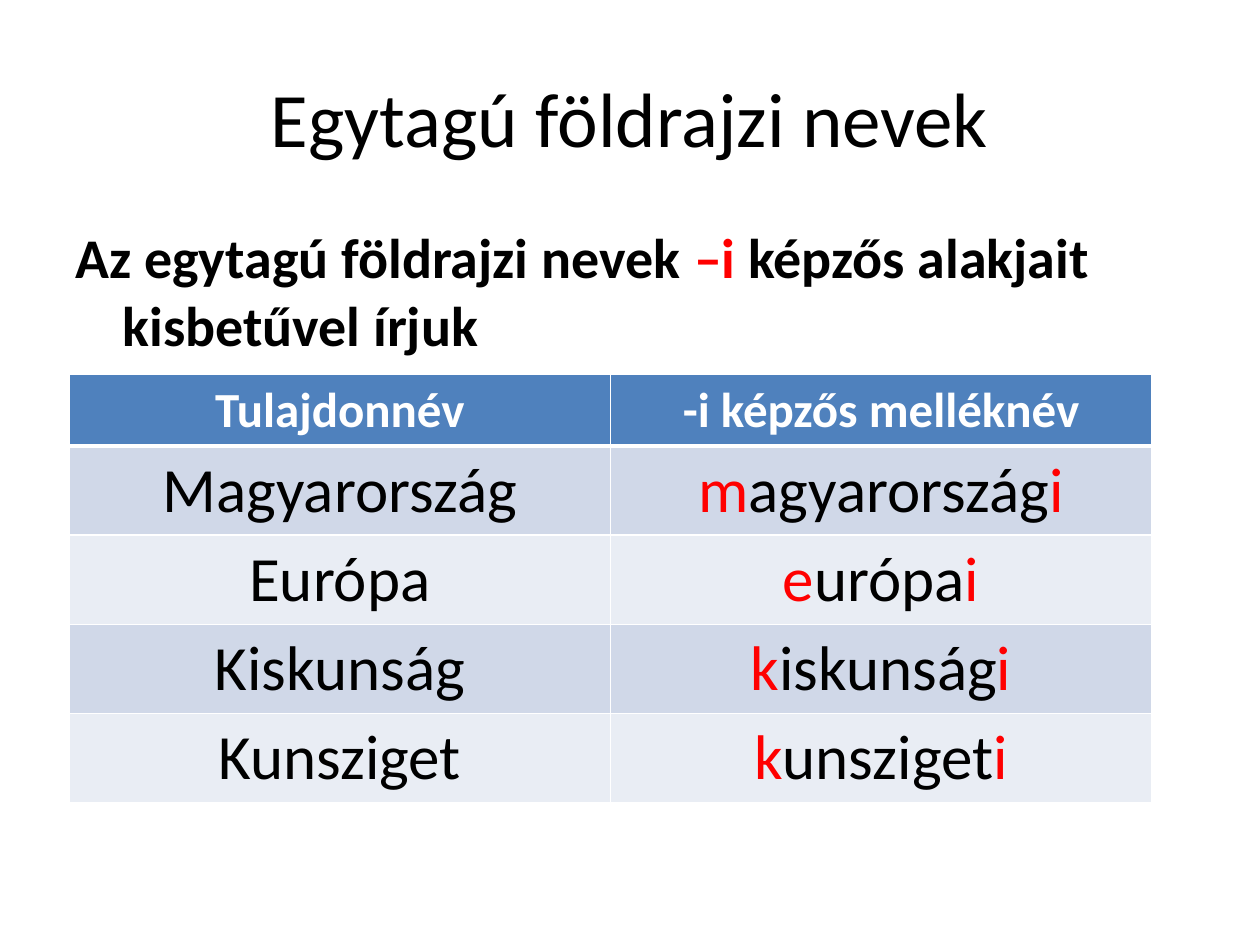
from dataclasses import dataclass
from lxml.etree import SubElement as Sub
from pptx import Presentation
from pptx.dml.color import RGBColor as RGB
from pptx.enum.text import MSO_ANCHOR as Anchor, PP_ALIGN as Align
from pptx.oxml.ns import qn
from pptx.util import Pt


@dataclass(frozen=True)
class Theme:
    font: str = "Calibri"
    ink: str = "000000"
    mark: str = "FF0000"
    white: str = "FFFFFF"
    head: str = "4F81BD"
    bands: tuple = ("D0D8E8", "E9EDF4")
    title: int = 44
    body: int = 32
    label: int = 28
    cell: int = 36


T = Theme()

TITLE = "Egytagú földrajzi nevek"
RULE = [
    ("Az egytagú földrajzi nevek ", T.ink),
    ("–i ", T.mark),
    ("képzős alakjait kisbetűvel írjuk", T.ink),
]
HEADS = ["Tulajdonnév", "-i képzős melléknév"]
NAMES = ["Magyarország", "Európa", "Kiskunság", "Kunsziget"]

LEFT, WIDTH = 36, 648
GRID = (39.6, 213.8)
COL, HEAD, ROW = 309.25, 41, 51


def write(para, runs, size, bold=False, align=Align.CENTER):
    para.alignment = align
    for text, color in runs:
        run = para.add_run()
        run.text = text
        font = run.font
        font.name, font.size, font.bold = T.font, Pt(size), bold
        font.color.rgb = RGB.from_string(color)


def add_box(slide, top, height, anchor):
    box = slide.shapes.add_textbox(Pt(LEFT), Pt(top), Pt(WIDTH), Pt(height))
    frame = box.text_frame
    frame.word_wrap = True
    frame.vertical_anchor = anchor
    return frame.paragraphs[0]


def edge(cell, side, width):
    line = Sub(cell._tc.get_or_add_tcPr(), qn(f"a:ln{side}"), w=str(Pt(width)))
    fill = Sub(line, qn("a:solidFill"))
    Sub(fill, qn("a:srgbClr"), val=T.white)


def add_grid(slide):
    rows = [[[(text, T.white)] for text in HEADS]]
    for name in NAMES:
        first, rest = name[0].lower(), name[1:]
        form = [(first, T.mark), (rest, T.ink), ("i", T.mark)]
        rows.append([[(name, T.ink)], form])
    high = HEAD + ROW * len(NAMES)
    table = slide.shapes.add_table(
        len(rows), len(HEADS), Pt(GRID[0]), Pt(GRID[1]),
        Pt(COL * len(HEADS)), Pt(high)).table
    for col in table.columns:
        col.width = Pt(COL)
    for r, row in enumerate(rows):
        top = r == 0
        table.rows[r].height = Pt(HEAD if top else ROW)
        shade = T.head if top else T.bands[(r - 1) % 2]
        for c, runs in enumerate(row):
            cell = table.cell(r, c)
            write(cell.text_frame.paragraphs[0], runs,
                  T.label if top else T.cell, top)
            for side in "LRTB":
                thick = (r, side) in ((0, "B"), (1, "T"))
                edge(cell, side, 3 if thick else 1)
            cell.fill.solid()
            cell.fill.fore_color.rgb = RGB.from_string(shade)


def main():
    deck = Presentation()
    deck.slide_width, deck.slide_height = Pt(720), Pt(540)
    slide = deck.slides.add_slide(deck.slide_layouts[6])
    write(add_box(slide, 21.6, 90, Anchor.MIDDLE), [(TITLE, T.ink)], T.title)
    para = add_box(slide, 123.8, 90, Anchor.TOP)
    props = para._p.get_or_add_pPr()
    props.set("marL", str(Pt(27)))
    props.set("indent", str(Pt(-27)))
    write(para, RULE, T.body, True, Align.LEFT)
    add_grid(slide)
    deck.save("out.pptx")


if __name__ == "__main__":
    main()
